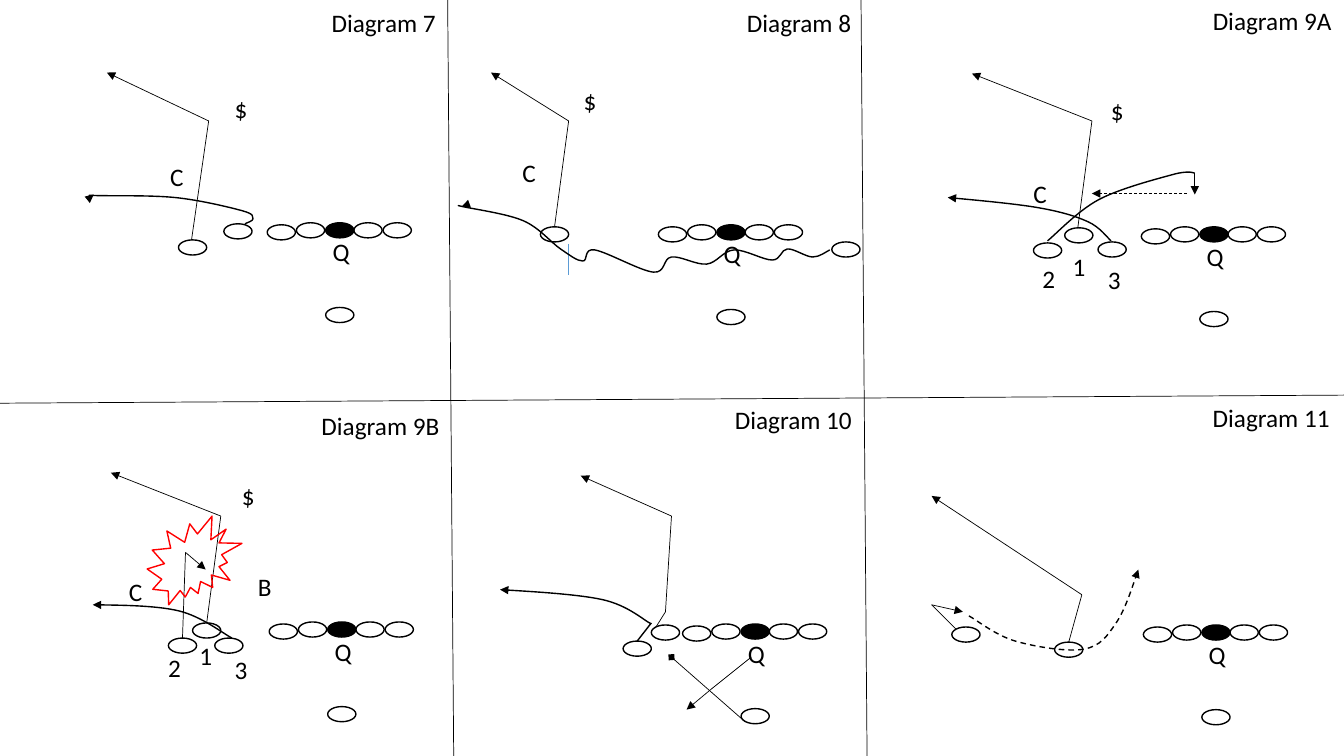
from lxml.etree import SubElement
from pptx import Presentation
from pptx.dml.color import RGBColor
from pptx.enum.dml import MSO_LINE
from pptx.enum.shapes import MSO_CONNECTOR, MSO_SHAPE
from pptx.enum.text import MSO_AUTO_SIZE
from pptx.oxml.ns import qn
from pptx.util import Cm, Pt

UNIT = 2.54
WIDE, HIGH = 13.33, 7.5
INK, RED, BLUE = "000000", "FF0000", "5B9BD5"
THIN, BOLD = 0.5, 1
ARROW, BLOCK = "triangle", "diamond"
OVAL_W, OVAL_H = 0.28, 0.15
TEXT_H = 0.4
Q_LEFT, Q_DOWN, Q_WIDE = 0.03, 0.09, 0.37
LINEMEN = [(-0.58, 0.02), (-0.29, 0), (0.28, 0), (0.57, 0)]
BACK = (0, 0.84)


def tint(code):
    return RGBColor.from_string(code)


def stroke(item, code=INK, width=BOLD, tip=None, dash=False):
    item.line.color.rgb = tint(code)
    item.line.width = Pt(width)
    if dash:
        item.line.dash_style = MSO_LINE.DASH
    props = item.element.spPr
    if tip:
        SubElement(props.find(qn("a:ln")), qn("a:tailEnd"), type=tip)
    SubElement(props, qn("a:effectLst"))


panels = [
    {"title": ("Diagram 7", 3.19, 0.02, 1.25),
     "center": (3.23, 2.21),
     "ends": [(1.77, 2.38), (2.22, 2.22)],
     "marks": [("C", 1.59, 1.55, 0.34), ("$", 2.23, 0.88, 0.33)],
     "cuts": [[(1.9, 2.38), (2.07, 1.2), (1.06, 0.72)]],
     "bends": [[(2.43, 2.22), (2.51, 2.17), (2.4, 2.09), (1.74, 1.96),
                (0.95, 1.94), (0.93, 1.93)]]},
    {"title": ("Diagram 8", 7.31, 0.02, 1.25),
     "center": (7.11, 2.23),
     "ends": [(8.25, 2.4), (5.36, 2.25)],
     "marks": [("C", 5.14, 1.51, 0.14), ("$", 5.69, 0.8, 0.33)],
     "cuts": [[(5.5, 2.25), (5.64, 1.2), (4.87, 0.72)]],
     "bends": [[(8.23, 2.48), (8.06, 2.55), (7.81, 2.47), (7.66, 2.58),
                (7.28, 2.48), (7.01, 2.62), (6.66, 2.55), (6.48, 2.7),
                (5.9, 2.48), (5.78, 2.59), (5.56, 2.47), (5.19, 2.19),
                (4.59, 2.05), (4.58, 2.05)]]},
    {"title": ("Diagram 9A", 11.93, 0, 1.39),
     "center": (11.9, 2.25),
     "ends": [(10.25, 2.41), (10.56, 2.26), (10.89, 2.4)],
     "marks": [("C", 10.15, 1.72, 0.34), ("$", 10.92, 0.9, 0.33),
               ("1", 10.54, 2.44, 0.33), ("2", 10.24, 2.56, 0.33),
               ("3", 10.89, 2.57, 0.33)],
     "cuts": [[(10.69, 2.26), (10.83, 1.2), (9.64, 0.73)],
              [(11.85, 1.72), (11.85, 1.93)]],
     "bends": [[(11.02, 2.39), (10.79, 2.2), (10.29, 2.06), (9.4, 1.96)]]},
    {"title": ("Diagram 9B", 3.09, 4.02, 1.38),
     "center": (3.25, 6.17),
     "ends": [(1.67, 6.33), (1.91, 6.18), (2.13, 6.33)],
     "marks": [("C", 1.18, 5.67, 0.34), ("$", 2.4, 4.72, 0.09),
               ("B", 2.46, 5.62, 0.34), ("1", 1.88, 6.3, 0.33),
               ("2", 1.57, 6.42, 0.33), ("3", 2.23, 6.44, 0.33)],
     "cuts": [[(2.05, 6.18), (2.19, 5.12), (1.1, 4.69)],
              [(1.81, 6.33), (1.84, 5.48), (2.04, 5.65)]],
     "bends": [[(2.3, 6.33), (1.77, 6.06), (0.92, 6)]]},
    {"title": ("Diagram 10", 7.19, 3.96, 1.37),
     "center": (7.35, 6.19),
     "ends": [(6.18, 6.36), (6.46, 6.2)],
     "marks": [],
     "cuts": [[(6.5, 6.23), (6.6, 6.07), (6.66, 5.12), (5.76, 4.72)],
              [(7.45, 6.52), (7.05, 6.84), (6.81, 7.04)]],
     "bends": [[(6.46, 6.19), (5.98, 5.95), (4.96, 5.85)]]},
    {"title": ("Diagram 11", 11.93, 3.94, 1.37),
     "center": (11.92, 6.2),
     "ends": [(10.46, 6.37), (9.44, 6.22)],
     "marks": [],
     "cuts": [[(10.6, 6.37), (10.73, 5.9), (9.24, 4.92)],
              [(9.48, 6.24), (9.24, 6), (9.55, 6.07)]],
     "bends": []},
]
borders = [[(4.44, 0), (4.5, HIGH)], [(8.54, 0), (8.6, HIGH)],
           [(0, 4), (WIDE, 3.92)]]
fake = [(11.77, 1.92), (10.83, 1.92)]
motion = [(5.64, 2.42), (5.64, 2.73)]
block = [(7.39, 7.16), (6.66, 6.52)]
release = [(6.32, 6.36), (6.46, 6.18)]
hook = [(10.39, 2.39), (10.9, 1.98), (11.64, 1.73), (11.85, 1.72)]
wheel = [(9.61, 6.11), (10.07, 6.36), (10.75, 6.44), (11.07, 6.18),
         (11.29, 5.65)]
clash = (1.46, 5.12, 0.94, 0.88)

ovals, labels = [], []
lines = [(border, {}) for border in borders]
lines += [(fake, {"tip": ARROW, "dash": True}), (motion, {"code": BLUE}),
          (block, {"tip": BLOCK}), (release, {"width": BOLD})]
curves = [(hook, {}), (wheel, {"tip": ARROW, "dash": True})]
for panel in panels:
    x, y = panel["center"]
    ovals.append((x, y, True))
    ovals += [(x + dx, y + dy, False) for dx, dy in LINEMEN + [BACK]]
    ovals += [(left, top, False) for left, top in panel["ends"]]
    labels += [panel["title"], *panel["marks"]]
    labels.append(("Q", x - Q_LEFT, y + Q_DOWN, Q_WIDE))
    lines += [(cut, {"tip": ARROW}) for cut in panel["cuts"]]
    curves += [(bend, {"tip": ARROW}) for bend in panel["bends"]]

deck = Presentation()
deck.slide_width, deck.slide_height = Cm(WIDE * UNIT), Cm(HIGH * UNIT)
slide = deck.slides.add_slide(deck.slide_layouts[6])
shapes = slide.shapes

for x, y, solid in ovals:
    place = [Cm(v * UNIT) for v in (x, y, OVAL_W, OVAL_H)]
    player = shapes.add_shape(MSO_SHAPE.OVAL, *place)
    if solid:
        player.fill.solid()
        player.fill.fore_color.rgb = tint(INK)
    else:
        player.fill.background()
    stroke(player)

for spots, style in lines:
    for start, end in zip(spots, spots[1:]):
        place = [Cm(v * UNIT) for v in start + end]
        leg = shapes.add_connector(MSO_CONNECTOR.STRAIGHT, *place)
        look = {"width": THIN, **style}
        if end != spots[-1]:
            look["tip"] = None
        stroke(leg, **look)

for spots, style in curves:
    chain = [spots[0], *spots, spots[-1]]
    knots = []
    for prior, start, end, after in zip(chain, chain[1:], chain[2:], chain[3:]):
        leave = [s + (e - p) / 6 for p, s, e in zip(prior, start, end)]
        reach = [e - (a - s) / 6 for s, e, a in zip(start, end, after)]
        knots += [leave, end if end == spots[-1] else reach, end]
    knots = [(Cm(x * UNIT), Cm(y * UNIT)) for x, y in knots]
    pen = shapes.build_freeform(*[Cm(v * UNIT) for v in spots[0]])
    pen.add_line_segments(knots, close=False)
    curve = pen.convert_to_shape()
    track = curve.element.spPr.find(".//" + qn("a:path"))
    nodes = track.findall(qn("a:lnTo"))
    for i in range(0, len(nodes), 3):
        bend = SubElement(track, qn("a:cubicBezTo"))
        for node in nodes[i:i + 3]:
            bend.append(node[0])
            track.remove(node)
    curve.fill.background()
    stroke(curve, **style)

burst = shapes.add_shape(MSO_SHAPE.EXPLOSION2, *[Cm(v * UNIT) for v in clash])
burst.fill.background()
stroke(burst, RED)

for text, x, y, width in labels:
    place = [Cm(v * UNIT) for v in (x, y, width, TEXT_H)]
    frame = shapes.add_textbox(*place).text_frame
    frame.text = text
    frame.word_wrap = width < 0.2
    frame.auto_size = MSO_AUTO_SIZE.SHAPE_TO_FIT_TEXT
    font = frame.paragraphs[0].runs[0].font
    font.name = "Calibri"
    font.size = Pt(18)
    font.color.rgb = tint(INK)

deck.save("out.pptx")
